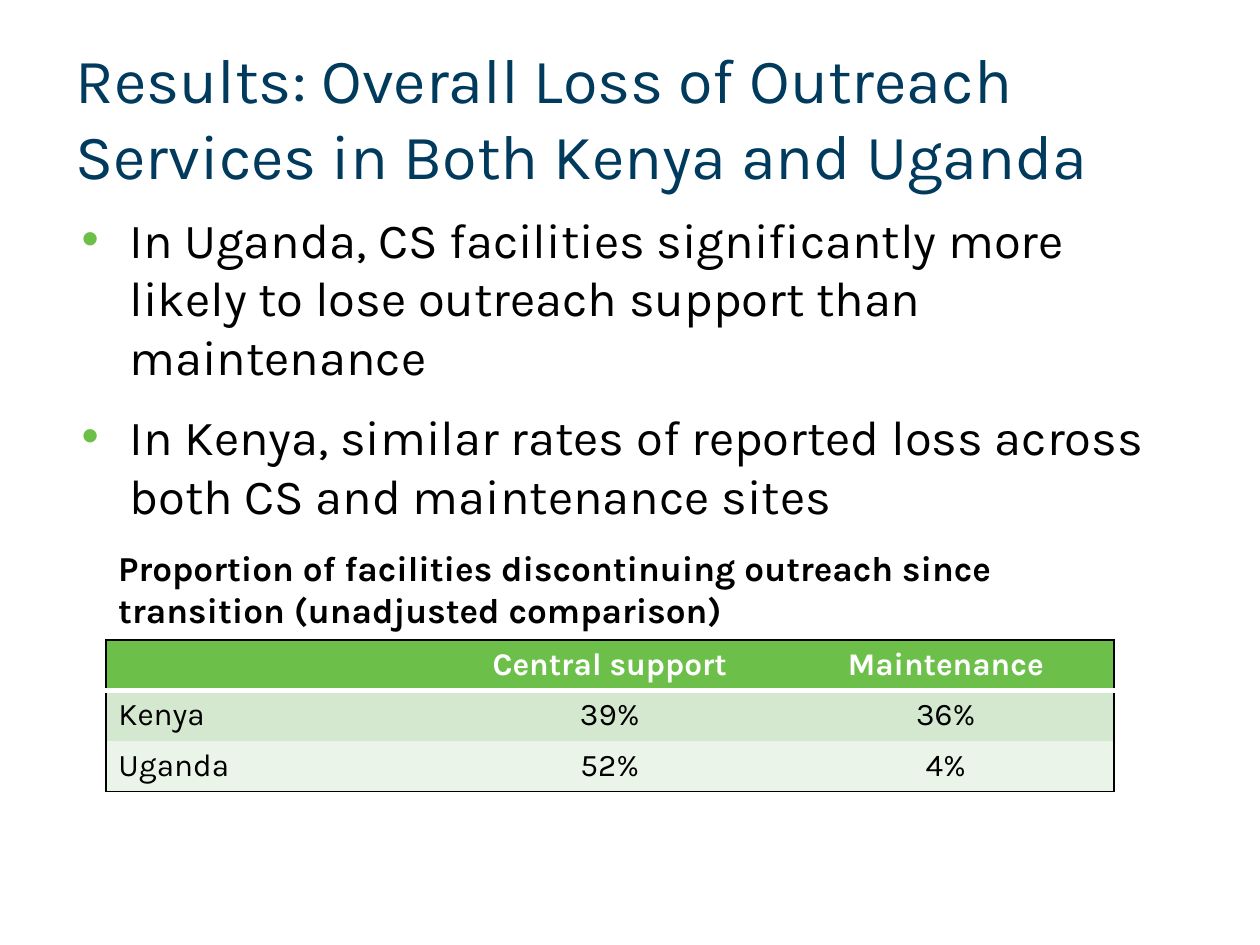
"""Build the slide on loss of outreach services in Kenya and Uganda."""
from lxml import etree
from pptx import Presentation
from pptx.dml.color import RGBColor
from pptx.enum.text import MSO_ANCHOR, MSO_AUTO_SIZE, PP_ALIGN
from pptx.oxml.ns import qn
from pptx.util import Inches, Pt

TITLE = "Results: Overall Loss of Outreach Services in Both Kenya and Uganda"
BULLETS = [
    "In Uganda, CS facilities significantly more likely to lose outreach support than maintenance",
    "In Kenya, similar rates of reported loss across both CS and maintenance sites",
]
CAPTION = "Proportion of facilities discontinuing outreach since transition (unadjusted comparison)"
ROWS = [
    ("", "Central support", "Maintenance"),
    ("Kenya", "39%", "36%"),
    ("Uganda", "52%", "4%"),
]

FONT = "Karla"
NAVY = RGBColor(0x00, 0x3A, 0x5D)
GREEN = RGBColor(0x6C, 0xC0, 0x4A)
BLACK = RGBColor(0x00, 0x00, 0x00)
WHITE = RGBColor(0xFF, 0xFF, 0xFF)
ROW_FILLS = [GREEN, RGBColor(0xD4, 0xE8, 0xD0), RGBColor(0xEB, 0xF4, 0xE9)]
LEFT, CENTER = PP_ALIGN.LEFT, PP_ALIGN.CENTER
MIDDLE = MSO_ANCHOR.MIDDLE
NO_AUTOFIT = MSO_AUTO_SIZE.NONE
OUTLINE = (BLACK, 1)
HEADER_RULE = (WHITE, 3)

TABLE_LEFT, TABLE_TOP = 0.84, 5.08
TABLE_WIDTH, ROW_HEIGHT = 8, 0.39
INDENT = Inches(0.38)


def add_run(paragraph, text, size, color, bold=False):
    run = paragraph.add_run()
    run.text = text
    run.font.name = FONT
    run.font.size = Pt(size)
    run.font.bold = bold
    run.font.color.rgb = color


def add_solid_fill(parent, color):
    fill = etree.SubElement(parent, qn("a:solidFill"))
    etree.SubElement(fill, qn("a:srgbClr"), val=str(color))


def add_text_box(slide, left, top, width, height):
    box = slide.shapes.add_textbox(Inches(left), Inches(top), Inches(width), Inches(height))
    box.text_frame.word_wrap = True
    return box.text_frame


def add_bullet(paragraph):
    properties = paragraph._p.get_or_add_pPr()
    properties.set("marL", str(INDENT))
    properties.set("indent", str(-INDENT))
    paragraph.space_before = Pt(12)
    color = etree.SubElement(properties, qn("a:buClr"))
    etree.SubElement(color, qn("a:srgbClr"), val=str(GREEN))
    etree.SubElement(properties, qn("a:buFont"), typeface="Arial")
    etree.SubElement(properties, qn("a:buChar"), char="•")


def add_borders(cell, borders):
    properties = cell._tc.get_or_add_tcPr()
    for side in ("L", "R", "T", "B"):
        line = etree.SubElement(properties, qn(f"a:ln{side}"))
        if borders.get(side):
            color, width = borders[side]
            line.set("w", str(Pt(width)))
            add_solid_fill(line, color)
        else:
            etree.SubElement(line, qn("a:noFill"))


def add_title(slide):
    title = slide.shapes.title
    title.left, title.top = Inches(0.5), Inches(0.3)
    title.width, title.height = Inches(9), Inches(1.25)
    frame = title.text_frame
    frame.word_wrap = True
    frame.auto_size = NO_AUTOFIT
    frame.vertical_anchor = MIDDLE
    frame.margin_top = frame.margin_bottom = 0
    paragraph = frame.paragraphs[0]
    paragraph.alignment = LEFT
    add_run(paragraph, TITLE, 36, NAVY)


def add_bullets(slide):
    frame = add_text_box(slide, 0.55, 1.61, 9, 4.95)
    for index, text in enumerate(BULLETS):
        paragraph = frame.add_paragraph() if index else frame.paragraphs[0]
        add_bullet(paragraph)
        add_run(paragraph, text, 28, BLACK)


def add_outreach_table(slide):
    last_row, last_column = len(ROWS) - 1, len(ROWS[0]) - 1
    table = slide.shapes.add_table(
        len(ROWS), len(ROWS[0]), Inches(TABLE_LEFT), Inches(TABLE_TOP),
        Inches(TABLE_WIDTH), Inches(ROW_HEIGHT * len(ROWS)),
    ).table
    for row_index, row in enumerate(ROWS):
        header = row_index == 0
        for column_index, text in enumerate(row):
            cell = table.cell(row_index, column_index)
            add_borders(cell, {
                "L": OUTLINE if column_index == 0 else None,
                "R": OUTLINE if column_index == last_column else None,
                "T": {0: OUTLINE, 1: HEADER_RULE}.get(row_index),
                "B": {0: HEADER_RULE, last_row: OUTLINE}.get(row_index),
            })
            cell.fill.solid()
            cell.fill.fore_color.rgb = ROW_FILLS[row_index]
            paragraph = cell.text_frame.paragraphs[0]
            paragraph.alignment = CENTER if column_index else LEFT
            if text:
                add_run(paragraph, text, 18, WHITE if header else BLACK, header)


def main():
    presentation = Presentation()
    presentation.slide_width, presentation.slide_height = Inches(10), Inches(7.5)
    slide = presentation.slides.add_slide(presentation.slide_layouts[5])
    add_title(slide)
    add_bullets(slide)
    add_outreach_table(slide)
    caption = add_text_box(slide, TABLE_LEFT, 4.29, 8.5, 1.08)
    add_run(caption.paragraphs[0], CAPTION, 20, BLACK, True)
    presentation.save("out.pptx")


if __name__ == "__main__":
    main()
